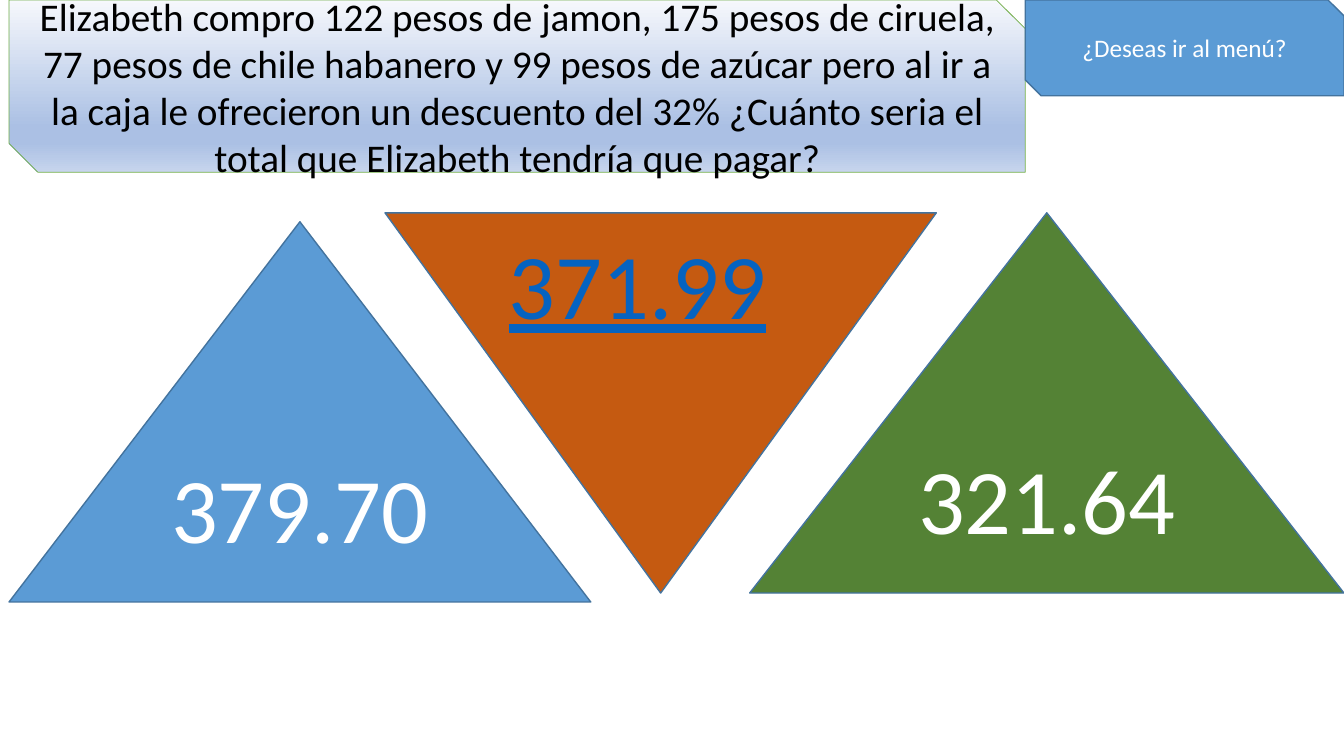
from pptx import Presentation
from pptx.dml.color import RGBColor
from pptx.enum.shapes import MSO_SHAPE
from pptx.enum.text import MSO_ANCHOR, MSO_AUTO_SIZE, PP_ALIGN
from pptx.oxml.ns import qn
from pptx.util import Pt
from lxml import etree

SNIPPED = MSO_SHAPE.SNIP_2_DIAG_RECTANGLE
TRIANGLE = MSO_SHAPE.ISOSCELES_TRIANGLE
MIDDLE = MSO_ANCHOR.MIDDLE
CENTER = PP_ALIGN.CENTER
LEFT = PP_ALIGN.LEFT
GROW = MSO_AUTO_SIZE.SHAPE_TO_FIT_TEXT

BLACK = RGBColor(0x00, 0x00, 0x00)
WHITE = RGBColor(0xFF, 0xFF, 0xFF)
BLUE = RGBColor(0x5B, 0x9B, 0xD5)
DARK_BLUE = RGBColor(0x43, 0x73, 0x9E)
ORANGE = RGBColor(0xC5, 0x5A, 0x11)
GREEN = RGBColor(0x54, 0x82, 0x35)
LIGHT_GREEN = RGBColor(0x70, 0xAD, 0x47)
LINK_BLUE = RGBColor(0x05, 0x63, 0xC1)
PALE = RGBColor(0xF6, 0xF8, 0xFC)
SOFT_BLUE = RGBColor(0xAB, 0xC0, 0xE4)
MIST = RGBColor(0xC7, 0xD5, 0xED)

QUESTION = (
    "Elizabeth compro 122 pesos de jamon, 175 pesos de ciruela, "
    "77 pesos de chile habanero y 99 pesos de azúcar pero al ir a la caja "
    "le ofrecieron un descuento del 32% ¿Cuánto seria el total que "
    "Elizabeth tendría que pagar?"
)
QUESTION_STOPS = [(0, PALE), (74, SOFT_BLUE), (83, SOFT_BLUE), (100, MIST)]
ANSWER_SIZE = 66


def write(frame, text, size, color, align=CENTER, underline=None):
    frame.word_wrap = True
    paragraph = frame.paragraphs[0]
    paragraph.alignment = align
    run = paragraph.add_run()
    run.text = text
    run.font.color.rgb = color
    formats = {"name": "Calibri", "size": Pt(size), "underline": underline}
    for attribute, value in formats.items():
        setattr(run.font, attribute, value)


def add_panel(slide, preset, box, fill, line=DARK_BLUE, line_width=1):
    panel = slide.shapes.add_shape(preset, *map(Pt, box))
    panel.shadow.inherit = False
    panel.fill.solid()
    panel.fill.fore_color.rgb = fill
    panel.line.color.rgb = line
    panel.line.width = Pt(line_width)
    panel.text_frame.vertical_anchor = MIDDLE
    return panel


def shade_downward(panel, stops):
    panel.fill.gradient()
    panel.fill.gradient_angle = 270
    stop_list = next(panel.element.spPr.iter(qn("a:gsLst")))
    for old_stop in list(stop_list):
        stop_list.remove(old_stop)
    for percent, color in stops:
        stop = etree.SubElement(stop_list, qn("a:gs"), pos=str(percent * 1000))
        etree.SubElement(stop, qn("a:srgbClr"), val=str(color))


def add_linked_answer(slide, text, box):
    answer = slide.shapes.add_textbox(*map(Pt, box))
    write(answer.text_frame, text, ANSWER_SIZE, LINK_BLUE, LEFT, True)
    answer.text_frame.auto_size = GROW


def main():
    presentation = Presentation()
    presentation.slide_width = Pt(960)
    presentation.slide_height = Pt(540)
    slide = presentation.slides.add_slide(presentation.slide_layouts[6])

    question = add_panel(slide, SNIPPED, (6.5, 0, 725.8, 123), PALE, LIGHT_GREEN, 0.5)
    shade_downward(question, QUESTION_STOPS)
    write(question.text_frame, QUESTION, 28, BLACK)

    left_answer = add_panel(slide, TRIANGLE, (6.5, 158.4, 415.5, 271.6), BLUE)
    write(left_answer.text_frame, "379.70", ANSWER_SIZE, WHITE)

    middle_triangle = add_panel(slide, TRIANGLE, (275, 152, 393.8, 271.6), ORANGE)
    middle_triangle.rotation = 180
    add_linked_answer(slide, "371.99", (356.4, 158.4, 222.5, 87.1))

    right_answer = add_panel(slide, TRIANGLE, (535.5, 152, 424.5, 271.6), GREEN)
    write(right_answer.text_frame, "321.64", ANSWER_SIZE, WHITE)

    menu = add_panel(slide, SNIPPED, (732.3, 0, 227.7, 68.4), BLUE)
    write(menu.text_frame, "¿Deseas ir al menú?", 18, WHITE)

    presentation.save("out.pptx")


if __name__ == "__main__":
    main()
